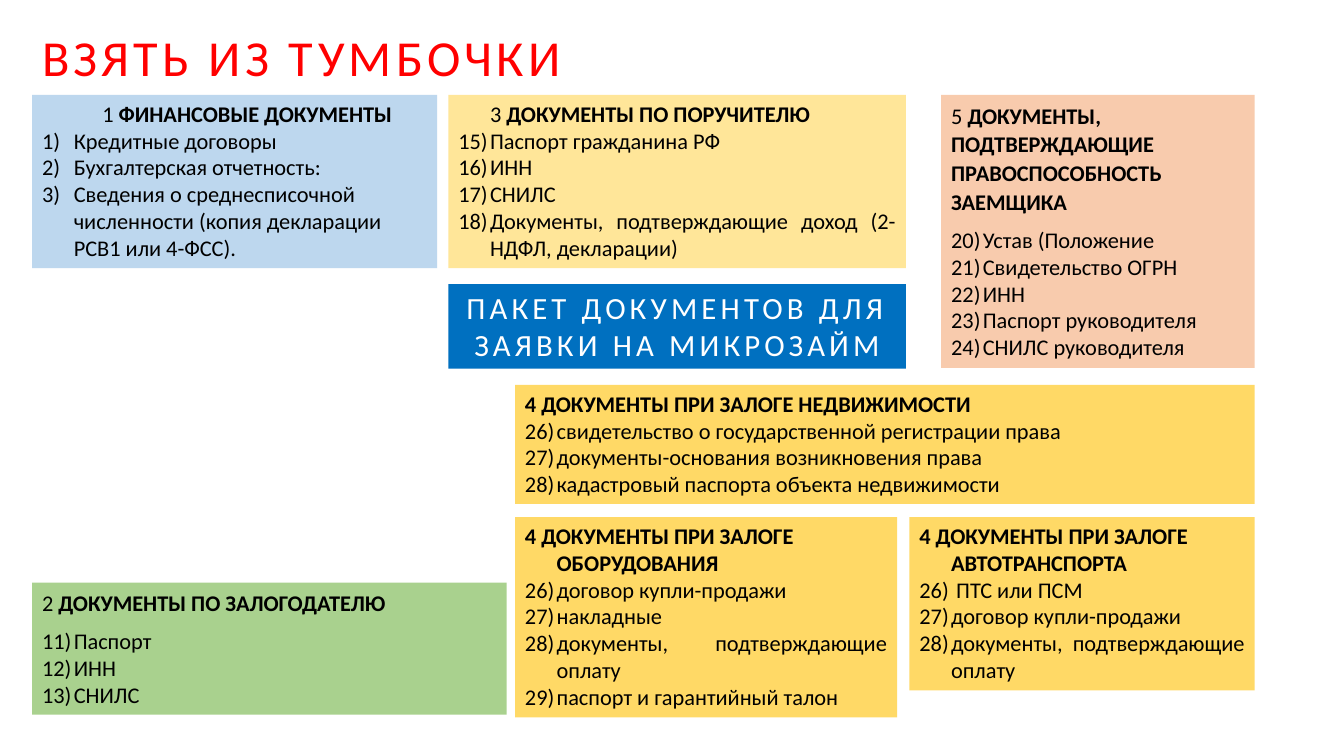
import pptx
import pptx.dml.color
import pptx.enum.shapes
import pptx.enum.text
import pptx.oxml.ns
import pptx.util
from lxml import etree

Cm = pptx.util.Cm
Pt = pptx.util.Pt
ALIGN = pptx.enum.text.PP_ALIGN
COLORS = {
    "black": "000000", "white": "FFFFFF", "red": "FF0000", "blue": "0070C0",
    "finance": "BDD7EE", "guarantor": "FFE699", "borrower": "F8CBAD",
    "pledger": "A9D18E", "pledge": "FFD966",
}
HANGING = {"marL": Cm(0.8), "indent": Cm(-0.8)}
SPACED = {"line_spacing": 1.07, "space_after": Pt(8)}


def assign(target, values):
    for name, value in values.items():
        setattr(target, name, value)


class DocumentSlide:
    font = "Calibri"

    def __init__(self, presentation):
        self.slide = presentation.slides.add_slide(presentation.slide_layouts[5])

    def place(self, shape, box):
        assign(shape, dict(zip(("left", "top", "width", "height"), map(Cm, box))))
        assign(shape.text_frame, {
            "word_wrap": True,
            "auto_size": pptx.enum.text.MSO_AUTO_SIZE.SHAPE_TO_FIT_TEXT,
            "vertical_anchor": pptx.enum.text.MSO_ANCHOR.TOP,
        })

    def add_text(self, paragraph, text, size=16, color="black", bold=False, tracking=0):
        run = paragraph.add_run()
        run.text = text
        assign(run.font, {"name": self.font, "size": Pt(size), "bold": bold})
        run.font.color.rgb = pptx.dml.color.RGBColor.from_string(COLORS[color])
        if tracking:
            run._r.get_or_add_rPr().set("spc", str(tracking * 100))

    def indent(self, paragraph, values):
        properties = paragraph._p.get_or_add_pPr()
        for name, value in values.items():
            properties.set(name, str(int(value)))
        return properties

    def title(self, text, box):
        shape = self.slide.shapes.title
        self.place(shape, box)
        paragraph = shape.text_frame.paragraphs[0]
        paragraph.alignment = ALIGN.LEFT
        self.add_text(paragraph, text, 36, "red", tracking=3)

    def panel(self, box, color):
        rectangle = pptx.enum.shapes.MSO_SHAPE.RECTANGLE
        shape = self.slide.shapes.add_shape(rectangle, *map(Cm, box))
        self.place(shape, box)
        shape.shadow.inherit = False
        shape.fill.solid()
        shape.fill.fore_color.rgb = pptx.dml.color.RGBColor.from_string(COLORS[color])
        shape.line.fill.background()
        return shape.text_frame

    def banner(self, text, box):
        paragraph = self.panel(box, "blue").paragraphs[0]
        paragraph.alignment = ALIGN.CENTER
        self.add_text(paragraph, text, 22, "white", tracking=3)

    def checklist(self, box, color, number, heading, start, items,
                  alignment=ALIGN.JUSTIFY, heading_alignment=ALIGN.LEFT,
                  heading_indent=(0, 0), spacing=None, bold_number=False):
        frame = self.panel(box, color)
        paragraph = frame.paragraphs[0]
        assign(paragraph, {"alignment": heading_alignment, **(spacing or {})})
        self.indent(paragraph, dict(zip(("marL", "indent"), map(Cm, heading_indent))))
        self.add_text(paragraph, f"{number} ", bold=bold_number)
        self.add_text(paragraph, heading, bold=True)
        for item in items:
            paragraph = frame.add_paragraph()
            paragraph.alignment = alignment
            properties = self.indent(paragraph, HANGING)
            etree.SubElement(properties, pptx.oxml.ns.qn("a:buAutoNum"),
                             type="arabicParenR", startAt=str(start))
            self.add_text(paragraph, item)

    def pledge(self, box, subject, items):
        self.checklist(box, "pledge", 4, f"ДОКУМЕНТЫ ПРИ ЗАЛОГЕ {subject}", 26, items,
                       heading_indent=(0.8, -0.8), bold_number=True)


def main():
    presentation = pptx.Presentation()
    assign(presentation, {"slide_width": Cm(33.87), "slide_height": Cm(19.05)})
    page = DocumentSlide(presentation)
    page.title("ВЗЯТЬ ИЗ ТУМБОЧКИ", (0.81, 0.53, 24.97, 1.8))
    page.checklist(
        (23.72, 2.39, 7.9, 6.88), "borrower", 5,
        "ДОКУМЕНТЫ, ПОДТВЕРЖДАЮЩИЕ ПРАВОСПОСОБНОСТЬ ЗАЕМЩИКА", 20,
        ["Устав (Положение", "Свидетельство ОГРН", "ИНН",
         "Паспорт руководителя", "СНИЛС руководителя"],
        alignment=ALIGN.LEFT, spacing=SPACED)
    page.banner("ПАКЕТ ДОКУМЕНТОВ ДЛЯ ЗАЯВКИ НА МИКРОЗАЙМ", (11.3, 7.16, 11.53, 2.13))
    page.checklist(
        (0.81, 2.39, 10.21, 4.37), "finance", 1, "ФИНАНСОВЫЕ ДОКУМЕНТЫ", 1,
        ["Кредитные договоры", "Бухгалтерская отчетность:",
         "Сведения о среднесписочной численности (копия декларации РСВ1 или 4-ФСС)."],
        alignment=ALIGN.LEFT, heading_alignment=ALIGN.JUSTIFY, heading_indent=(1.52, 0))
    page.checklist(
        (11.3, 2.39, 11.53, 4.37), "guarantor", 3, "ДОКУМЕНТЫ ПО ПОРУЧИТЕЛЮ", 15,
        ["Паспорт гражданина РФ", "ИНН", "СНИЛС",
         "Документы, подтверждающие доход (2-НДФЛ, декларации)"],
        heading_alignment=ALIGN.JUSTIFY, heading_indent=(0.8, 0))
    page.pledge((22.92, 13.03, 8.7, 4.37), "АВТОТРАНСПОРТА",
                [" ПТС или ПСМ", "договор купли-продажи",
                 "документы, подтверждающие оплату"])
    page.checklist(
        (0.81, 14.68, 11.96, 3.33), "pledger", 2, "ДОКУМЕНТЫ ПО ЗАЛОГОДАТЕЛЮ", 11,
        ["Паспорт", "ИНН", "СНИЛС"],
        heading_alignment=ALIGN.JUSTIFY, spacing=SPACED)
    page.pledge((12.98, 9.7, 18.64, 3), "НЕДВИЖИМОСТИ",
                ["свидетельство о государственной регистрации права",
                 "документы-основания возникновения права",
                 "кадастровый паспорта объекта недвижимости"])
    page.pledge((12.98, 13.03, 9.63, 5.05), "ОБОРУДОВАНИЯ",
                ["договор купли-продажи", "накладные",
                 "документы, подтверждающие оплату", "паспорт и гарантийный талон"])
    presentation.save("out.pptx")


if __name__ == "__main__":
    main()
